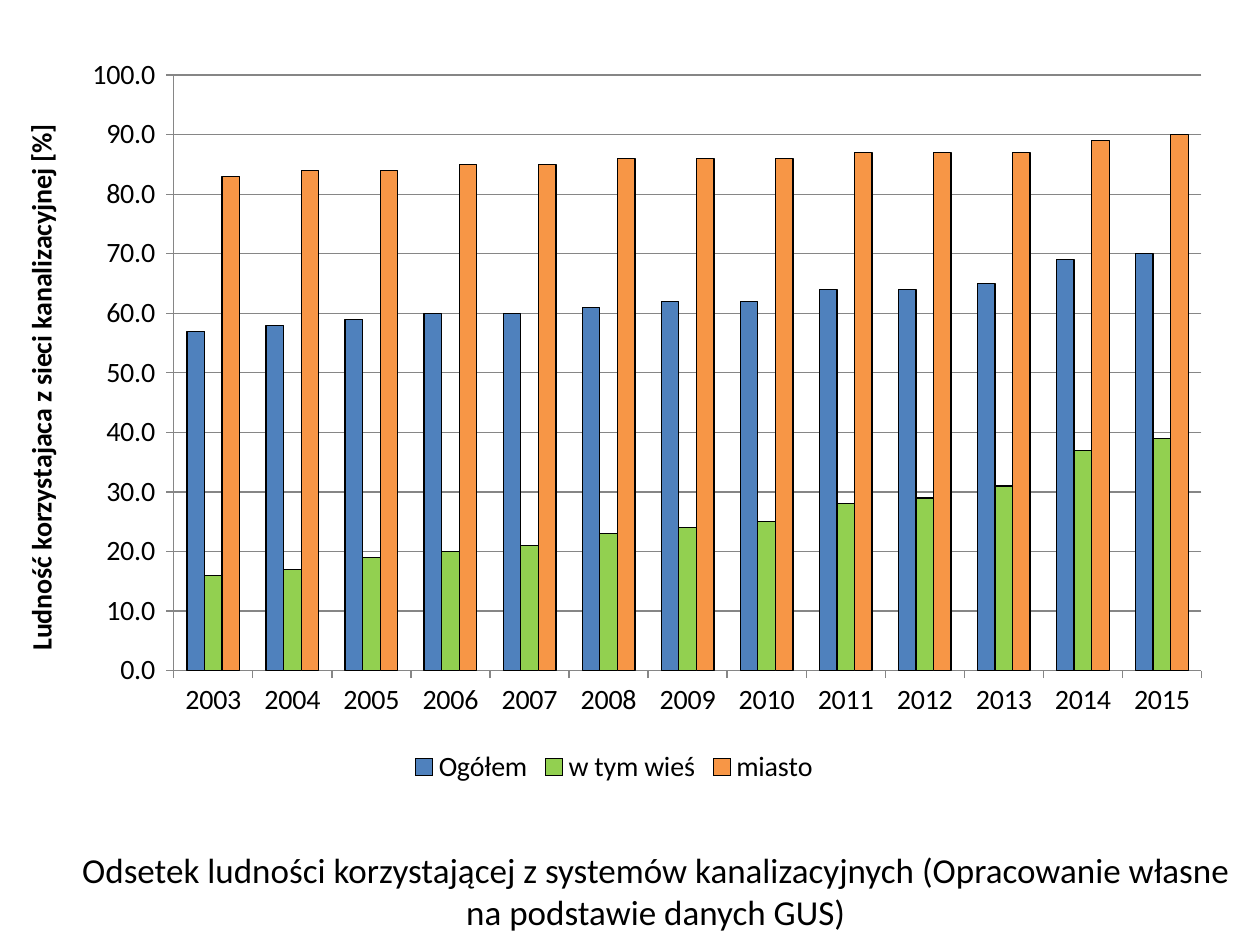
from lxml import etree
from pptx import Presentation
from pptx.chart.data import CategoryChartData
from pptx.dml.color import RGBColor
from pptx.enum.chart import XL_CHART_TYPE, XL_LEGEND_POSITION, XL_TICK_MARK
from pptx.enum.text import MSO_ANCHOR, PP_ALIGN
from pptx.util import Inches, Pt

CLUSTERED = XL_CHART_TYPE.COLUMN_CLUSTERED
BOTTOM = XL_LEGEND_POSITION.BOTTOM
OUTSIDE = XL_TICK_MARK.OUTSIDE
MIDDLE = MSO_ANCHOR.MIDDLE
CENTER = PP_ALIGN.CENTER

THEME = {
    "font": "Calibri",
    "text": RGBColor.from_string("000000"),
    "axis": RGBColor.from_string("868686"),
    "chart_size": Pt(16),
    "caption_size": Pt(20),
}
SERIES = [
    ("Ogółem", "4F81BD", [57, 58, 59, 60, 60, 61, 62, 62, 64, 64, 65, 69, 70]),
    ("w tym wieś", "92D050", [16, 17, 19, 20, 21, 23, 24, 25, 28, 29, 31, 37, 39]),
    ("miasto", "F79646", [83, 84, 84, 85, 85, 86, 86, 86, 87, 87, 87, 89, 90]),
]
PLOT_LAYOUT = {
    "layoutTarget": "inner", "xMode": "edge", "yMode": "edge",
    "x": 0.14, "y": 0.04, "w": 0.84, "h": 0.8,
}


def set_font(font, size, bold=False):
    values = {"name": THEME["font"], "size": size, "bold": bold}
    for name, value in values.items():
        setattr(font, name, value)
    font.color.rgb = THEME["text"]


def set_line(line, color):
    line.color.rgb = color
    line.width = Pt(0.75)


deck = Presentation()
deck.slide_width = Inches(10)
deck.slide_height = Inches(7.5)
page = deck.slides.add_slide(deck.slide_layouts[6])

box = page.shapes.add_textbox(Inches(0.4), Inches(6.67), Inches(9.61), Inches(0.79))
frame = box.text_frame
frame.word_wrap = True
frame.vertical_anchor = MIDDLE
para = frame.paragraphs[0]
para.alignment = CENTER
span = para.add_run()
span.text = (
    "Odsetek ludności korzystającej z systemów kanalizacyjnych "
    "(Opracowanie własne na podstawie danych GUS)"
)
set_font(span.font, THEME["caption_size"])

data = CategoryChartData()
data.categories = [str(year) for year in range(2003, 2016)]
for name, color, values in SERIES:
    data.add_series(name, values)
chart = page.shapes.add_chart(
    CLUSTERED, Inches(0.02), Inches(0.36), Inches(9.71), Inches(5.91), data
).chart
set_font(chart.font, THEME["chart_size"])
chart.has_title = False
chart.has_legend = True
chart.legend.position = BOTTOM
chart.legend.include_in_layout = False

plot = chart.plots[0]
for name, value in {"gap_width": 150, "overlap": 0, "vary_by_categories": False}.items():
    setattr(plot, name, value)
for series, (name, color, values) in zip(plot.series, SERIES):
    series.format.fill.solid()
    series.format.fill.fore_color.rgb = RGBColor.from_string(color)
    set_line(series.format.line, THEME["text"])

share_axis = chart.value_axis
for name, value in {"minimum_scale": 0, "maximum_scale": 100, "major_unit": 10}.items():
    setattr(share_axis, name, value)
share_axis.tick_labels.number_format = "0.0_)"
share_axis.tick_labels.number_format_is_linked = False
set_line(share_axis.major_gridlines.format.line, THEME["axis"])
for axis in (chart.category_axis, share_axis):
    axis.major_tick_mark = OUTSIDE
    set_line(axis.format.line, THEME["axis"])

title = share_axis.axis_title.text_frame.paragraphs[0].add_run()
title.text = "Ludność korzystajaca z sieci kanalizacyjnej [%]"
set_font(title.font, THEME["chart_size"], bold=True)

plot_area = chart.element.find(".//{*}plotArea")
namespace = etree.QName(plot_area).namespace
for old_layout in plot_area.findall(f"{{{namespace}}}layout"):
    plot_area.remove(old_layout)
layout = etree.Element(f"{{{namespace}}}layout")
manual = etree.SubElement(layout, f"{{{namespace}}}manualLayout")
for name, value in PLOT_LAYOUT.items():
    etree.SubElement(manual, f"{{{namespace}}}{name}", val=str(value))
plot_area.insert(0, layout)

deck.save("out.pptx")
